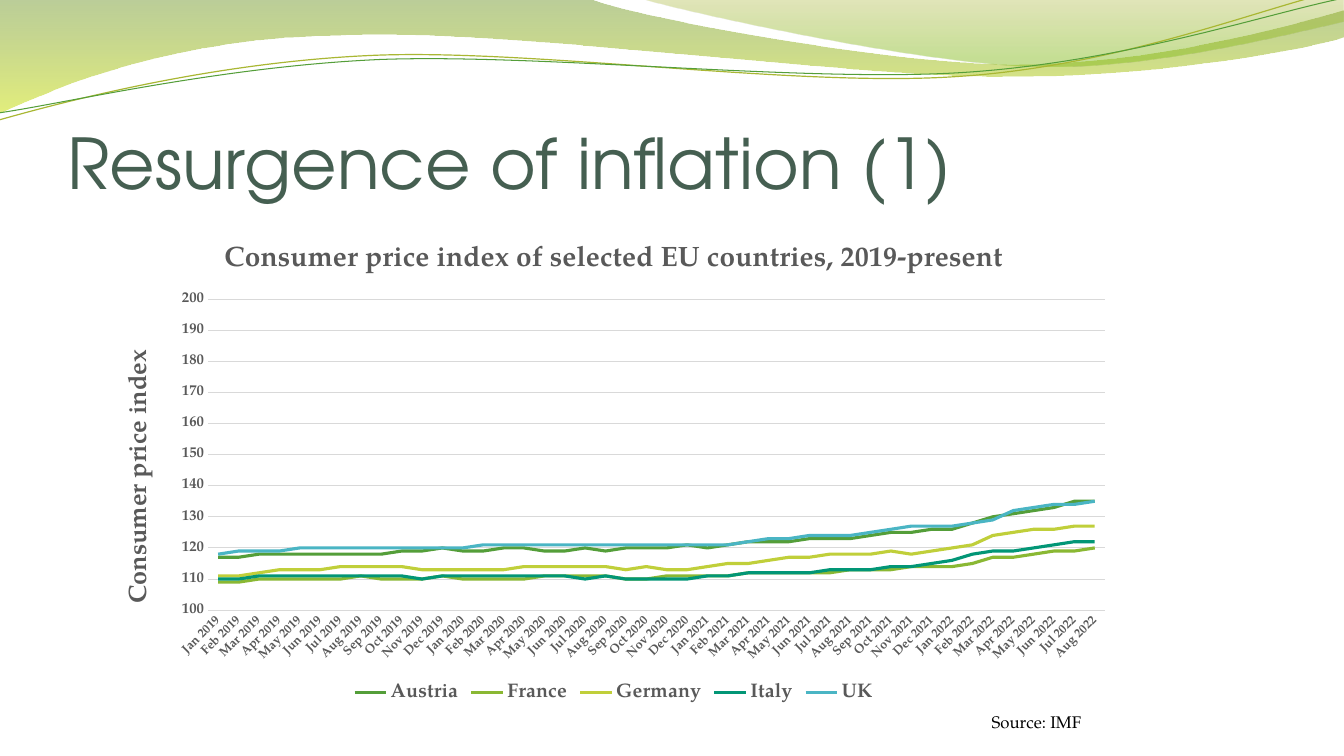
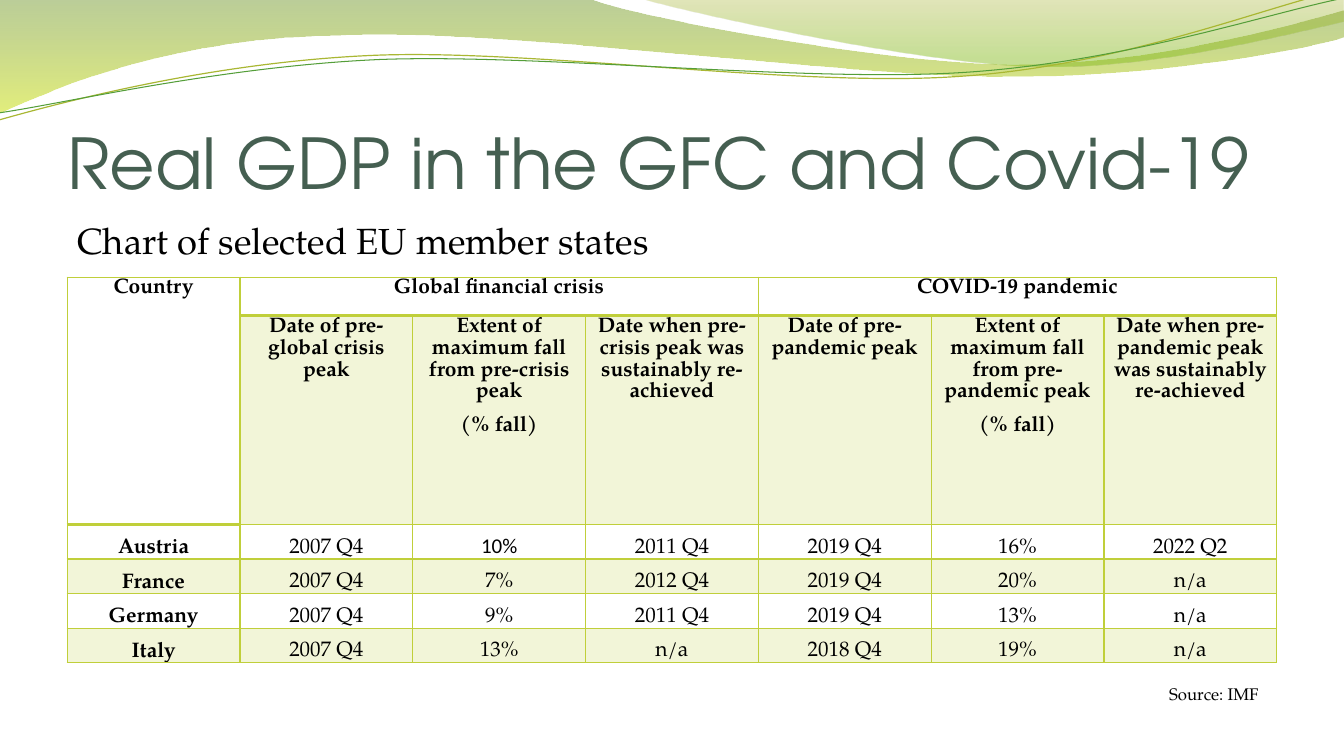
from lxml import etree
from pptx import Presentation
from pptx.chart import data as chart_data
from pptx.dml.color import RGBColor
from pptx.enum import chart as charts, text
from pptx.oxml import ns
from pptx.util import Pt

BLACK = RGBColor(0x00, 0x00, 0x00)
GREY = RGBColor(0x59, 0x59, 0x59)
GRID = RGBColor(0xD9, 0xD9, 0xD9)
PINE = RGBColor(0x45, 0x5F, 0x51)
LEAF = RGBColor(0x54, 0x9E, 0x39)
GRASS = RGBColor(0x8A, 0xB8, 0x33)
LIME = RGBColor(0xC0, 0xCF, 0x3A)
PALE_LIME = RGBColor(0xF2, 0xF5, 0xD8)
TEAL = RGBColor(0x02, 0x96, 0x76)
SKY = RGBColor(0x4A, 0xB5, 0xC4)
OLIVE = RGBColor(0xA9, 0xB7, 0x33)
MOSS = RGBColor(0x69, 0x92, 0x1C)
YELLOW = RGBColor(0xCC, 0xE1, 0x0F)
KHAKI = RGBColor(0x9B, 0xAA, 0x1A)
SPRING = RGBColor(0x81, 0xBA, 0x16)

HEADING_FONT = "TeX Gyre Adventor"
BODY_FONT = "TeX Gyre Pagella"
PAGE_WIDTH, PAGE_HEIGHT = 960, 540
MARGIN = 48
CONTENT_WIDTH = PAGE_WIDTH - 2 * MARGIN

# Outlines: a start point, then lines (x, y) or Bézier curves (x1, y1, x2, y2, x, y).
WIDE_WAVE = [
    (-1, 0), (422.6, -0.4),
    (456.5, 12.9, 636.5, 46.1, 727.9, 46.1), (818.6, 46.1, 919.4, 19.4, 959.8, 7.2),
    (960.5, 26.6),
    (943.9, 32.4, 834.5, 55.4, 715.7, 54.7), (596.9, 54.7, 366.5, 20.9, 247, 25.2),
    (123.8, 26.6, 43.9, 60.5, -1.4, 81.4)]
RIGHT_WAVE = [
    (459.4, -0.4),
    (488.9, 8.3, 654.5, 45, 738, 47.2), (820.8, 50.1, 923, 23.4, 959.8, 15.5),
    (959.8, 0)]
OLIVE_STRAND = [
    (-0.7, 85.7), (45.4, 72.7, 151.2, 44.6, 265.7, 39.6),
    (379.4, 34.6, 568.1, 62.6, 683.3, 54.7), (799.2, 47.5, 900.7, 5.8, 957.6, -7.2)]
LEAF_STRAND = [
    (-0.7, 80.6), (44.6, 74.2, 157, 47.5, 271.4, 42.5),
    (386.6, 38.2, 573.1, 59, 687.6, 51.8), (802.1, 44.6, 903.6, 10.1, 959.8, -1.4)]

MONTHS = "Jan Feb Mar Apr May Jun Jul Aug Sep Oct Nov Dec".split()
PERIODS = [f"{month} {year}" for year in range(2019, 2023) for month in MONTHS][:44]
PRICE_INDEX = {
    "Austria": (LEAF, [
        117, 117, 118, 118, 118, 118, 118, 118, 118, 119, 119, 120,
        119, 119, 120, 120, 119, 119, 120, 119, 120, 120, 120, 121,
        120, 121, 122, 122, 122, 123, 123, 123, 124, 125, 125, 126,
        126, 128, 130, 131, 132, 133, 135, 135]),
    "France": (GRASS, [
        109, 109, 110, 110, 110, 110, 110, 111, 110, 110, 110, 111,
        110, 110, 110, 110, 111, 111, 111, 111, 110, 110, 111, 111,
        111, 111, 112, 112, 112, 112, 112, 113, 113, 113, 114, 114,
        114, 115, 117, 117, 118, 119, 119, 120]),
    "Germany": (LIME, [
        111, 111, 112, 113, 113, 113, 114, 114, 114, 114, 113, 113,
        113, 113, 113, 114, 114, 114, 114, 114, 113, 114, 113, 113,
        114, 115, 115, 116, 117, 117, 118, 118, 118, 119, 118, 119,
        120, 121, 124, 125, 126, 126, 127, 127]),
    "Italy": (TEAL, [
        110, 110, 111, 111, 111, 111, 111, 111, 111, 111, 110, 111,
        111, 111, 111, 111, 111, 111, 110, 111, 110, 110, 110, 110,
        111, 111, 112, 112, 112, 112, 113, 113, 113, 114, 114, 115,
        116, 118, 119, 119, 120, 121, 122, 122]),
    "UK": (SKY, [
        118, 119, 119, 119, 120, 120, 120, 120, 120, 120, 120, 120,
        120, 121, 121, 121, 121, 121, 121, 121, 121, 121, 121, 121,
        121, 121, 122, 123, 123, 124, 124, 124, 125, 126, 127, 127,
        127, 128, 129, 132, 133, 134, 134, 135]),
}

GDP_ROWS = [
    ["Country", "Global financial crisis", "", "", "COVID-19 pandemic", "", ""],
    ["", "Date of pre-global crisis peak",
     "Extent of maximum fall from pre-crisis peak\n(% fall)",
     "Date when pre-crisis peak was sustainably re-achieved",
     "Date of pre-pandemic peak",
     "Extent of maximum fall from pre-pandemic peak\n(% fall)",
     "Date when pre-pandemic peak was sustainably re-achieved"],
    ["Austria", "2007 Q4", "10%", "2011 Q4", "2019 Q4", "16%", "2022 Q2"],
    ["France", "2007 Q4", "7%", "2012 Q4", "2019 Q4", "20%", "n/a"],
    ["Germany", "2007 Q4", "9%", "2011 Q4", "2019 Q4", "13%", "n/a"],
    ["Italy", "2007 Q4", "13%", "n/a", "2018 Q4", "19%", "n/a"],
]
GDP_ROW_HEIGHTS = [27.5, 149] + [24.75] * 4
GDP_MERGES = [((0, 0), (1, 0)), ((0, 1), (0, 3)), ((0, 4), (0, 6))]


def style_font(font, size, color, bold=False, name=BODY_FONT):
    font.name, font.size, font.bold = name, Pt(size), bold
    font.color.rgb = color


def add_text(page, box, words, size, color=BLACK, name=BODY_FONT):
    shape = page.shapes.add_textbox(*map(Pt, box))
    frame = shape.text_frame
    frame.word_wrap = True
    frame.text = words
    para = frame.paragraphs[0]
    para.space_before = Pt(size * 0.2)
    style_font(para.runs[0].font, size, color, name=name)
    return frame


def add_outline(page, outline, close):
    """Draw an outline, joining each three points of a curve into one Bézier."""
    points = [(Pt(x), Pt(y)) for segment in outline
              for x, y in zip(segment[::2], segment[1::2])]
    builder = page.shapes.build_freeform(*points[0])
    builder.add_line_segments(points[1:], close=close)
    shape = builder.convert_to_shape()
    shape.shadow.inherit = False
    lines = iter(list(shape._element.iter(ns.qn("a:lnTo"))))
    for segment in outline[1:]:
        parts = [next(lines) for _ in range(len(segment) // 2)]
        if len(parts) == 3:
            curve = etree.Element(ns.qn("a:cubicBezTo"))
            parts[0].addprevious(curve)
            for part in parts:
                curve.append(part[0])
                part.getparent().remove(part)
    return shape


def add_wave(page, outline, stops):
    """Draw a wave filled downwards; stops are (position, colour, opacity %)."""
    wave = add_outline(page, outline, close=True)
    wave.line.fill.background()
    wave.fill.gradient()
    wave.fill.gradient_angle = 270
    for stop, (position, color, _) in zip(wave.fill.gradient_stops, stops):
        stop.position = position
        stop.color.rgb = color
    for color_node, (_, _, opacity) in zip(
            wave._element.spPr.iter(ns.qn("a:srgbClr")), stops):
        etree.SubElement(color_node, ns.qn("a:alpha"), val=str(opacity * 1000))


def add_strand(page, outline, color, width):
    strand = add_outline(page, outline, close=False)
    strand.fill.background()
    strand.line.color.rgb = color
    strand.line.width = Pt(width)


def add_page(deck, title):
    """Add a page with the wave band and its title."""
    page = deck.slides.add_slide(deck.slide_layouts[6])
    add_wave(page, WIDE_WAVE, [(0, MOSS, 45), (1, YELLOW, 55)])
    add_wave(page, RIGHT_WAVE, [(0, KHAKI, 30), (0.8, SPRING, 45)])
    add_strand(page, OLIVE_STRAND, OLIVE, 0.85)
    add_strand(page, LEAF_STRAND, LEAF, 0.75)
    frame = add_text(page, (MARGIN, 55.4, CONTENT_WIDTH, 90), title, 50, PINE, HEADING_FONT)
    frame.vertical_anchor = text.MSO_ANCHOR.BOTTOM
    frame.margin_left = frame.margin_right = frame.margin_bottom = 0
    return page


def set_layout(element, chart_size, **lengths):
    """Fix the place of a chart part, in points from the chart's corner."""
    for old in element.findall(ns.qn("c:layout")):
        element.remove(old)
    layout = etree.Element(ns.qn("c:layout"))
    element.insert(len(element.findall(ns.qn("c:tx"))), layout)
    manual = etree.SubElement(layout, ns.qn("c:manualLayout"))
    if "w" in lengths:
        etree.SubElement(manual, ns.qn("c:layoutTarget"), val="inner")
    for side in "xy":
        etree.SubElement(manual, ns.qn(f"c:{side}Mode"), val="edge")
    width, height = chart_size
    for side, length in lengths.items():
        share = length / (width if side in "xw" else height)
        etree.SubElement(manual, ns.qn(f"c:{side}"), val=f"{share:.4f}")


def set_chart_title(title, words, size, chart_size, x, y):
    title.text_frame.text = words
    style_font(title.text_frame.paragraphs[0].runs[0].font, size, GREY, bold=True)
    set_layout(title._element, chart_size, x=x, y=y)


def add_price_chart(page, box):
    data = chart_data.CategoryChartData(number_format="#,##0")
    data.categories = PERIODS
    for country, (_, values) in PRICE_INDEX.items():
        data.add_series(country, values)
    chart = page.shapes.add_chart(charts.XL_CHART_TYPE.LINE, *map(Pt, box), data).chart
    chart_size = box[2:]
    style_font(chart.font, 10, BLACK)
    set_chart_title(chart.chart_title,
                    "Consumer price index of selected EU countries, 2019-present",
                    20, chart_size, 83.3, 10.9)
    plot = chart.plots[0]
    plot.vary_by_categories = False
    for series, (color, _) in zip(plot.series, PRICE_INDEX.values()):
        series.smooth = False
        series.marker.style = charts.XL_MARKER_STYLE.NONE
        series.format.line.color.rgb = color
        series.format.line.width = Pt(2.25)

    months, index = chart.category_axis, chart.value_axis
    for axis, size in ((months, 9), (index, 10.5)):
        axis.major_tick_mark = axis.minor_tick_mark = charts.XL_TICK_MARK.NONE
        style_font(axis.tick_labels.font, size, GREY, bold=True)
    months._element.find(ns.qn("c:txPr")).find(ns.qn("a:bodyPr")).set("rot", "-2700000")
    index.minimum_scale, index.maximum_scale, index.major_unit = 100, 200, 10
    index.format.line.fill.background()
    index.has_major_gridlines = True
    for line in (months.format.line, index.major_gridlines.format.line):
        line.color.rgb = GRID
        line.width = Pt(0.75)
    set_chart_title(index.axis_title, "Consumer price index", 18, chart_size, 13.1, 87.8)

    chart.has_legend = True
    chart.legend.position = charts.XL_LEGEND_POSITION.BOTTOM
    chart.legend.include_in_layout = False
    style_font(chart.legend.font, 14, GREY, bold=True)
    plot_area = chart._chartSpace.find(ns.qn("c:chart")).find(ns.qn("c:plotArea"))
    set_layout(plot_area, chart_size, x=75.2, y=54.6, w=640.7, h=222.2)


def rule_width(row, column):
    """Return the width of the rule below a cell."""
    return 2 if row == 0 or (row, column) == (1, 0) else 1


def set_borders(cell, row, column):
    above = rule_width(row - 1, column) if row else 1
    widths = {"L": 1, "R": 1, "T": above, "B": rule_width(row, column)}
    for side, width in widths.items():
        line = etree.SubElement(cell._tc.get_or_add_tcPr(), ns.qn(f"a:ln{side}"),
                                w=str(Pt(width)))
        fill = etree.SubElement(line, ns.qn("a:solidFill"))
        etree.SubElement(fill, ns.qn("a:srgbClr"), val=str(LIME))


def fill_cell(cell, row, column, words):
    set_borders(cell, row, column)
    if row % 2 and (row, column) != (1, 0):
        cell.fill.solid()
        cell.fill.fore_color.rgb = PALE_LIME
    else:
        cell.fill.background()
    cell.margin_left = cell.margin_right = Pt(5)
    cell.margin_top = cell.margin_bottom = 0
    cell.vertical_anchor = text.MSO_ANCHOR.BOTTOM if row > 1 else text.MSO_ANCHOR.TOP
    if not words:
        return
    cell.text_frame.text = words
    for para in cell.text_frame.paragraphs:
        para.alignment = text.PP_ALIGN.CENTER
        para.line_spacing = 1.07
        para.space_after = Pt(8)
        name = "Calibri" if words == "10%" else BODY_FONT
        style_font(para.runs[0].font, 15, BLACK, row < 2 or column == 0, name)


def add_gdp_table(page, left, top, width):
    columns = len(GDP_ROWS[0])
    table = page.shapes.add_table(len(GDP_ROWS), columns, Pt(left), Pt(top), Pt(width),
                                  Pt(sum(GDP_ROW_HEIGHTS))).table
    table.first_row = table.horz_banding = False
    for column in table.columns:
        column.width = Pt(width / columns)
    for row, height in zip(table.rows, GDP_ROW_HEIGHTS):
        row.height = Pt(height)
    for start, end in GDP_MERGES:
        table.cell(*start).merge(table.cell(*end))
    for row, entries in enumerate(GDP_ROWS):
        for column, words in enumerate(entries):
            fill_cell(table.cell(row, column), row, column, words)


def main():
    deck = Presentation()
    deck.slide_width, deck.slide_height = Pt(PAGE_WIDTH), Pt(PAGE_HEIGHT)

    page = add_page(deck, "Resurgence of inflation (1)")
    add_text(page, (701.3, 504.7, 148.3, 31.7), "Source: IMF", 12)
    add_price_chart(page, (73.4, 159.1, 730, 345.6))

    page = add_page(deck, "Real GDP in the GFC and Covid-19")
    add_text(page, (MARGIN, 152.6, CONTENT_WIDTH, 46), "Chart of selected EU member states", 26)
    add_gdp_table(page, MARGIN, 198, CONTENT_WIDTH)
    add_text(page, (828, 484.6, 108, 35.3), "Source: IMF", 12)

    deck.save("out.pptx")


if __name__ == "__main__":
    main()
